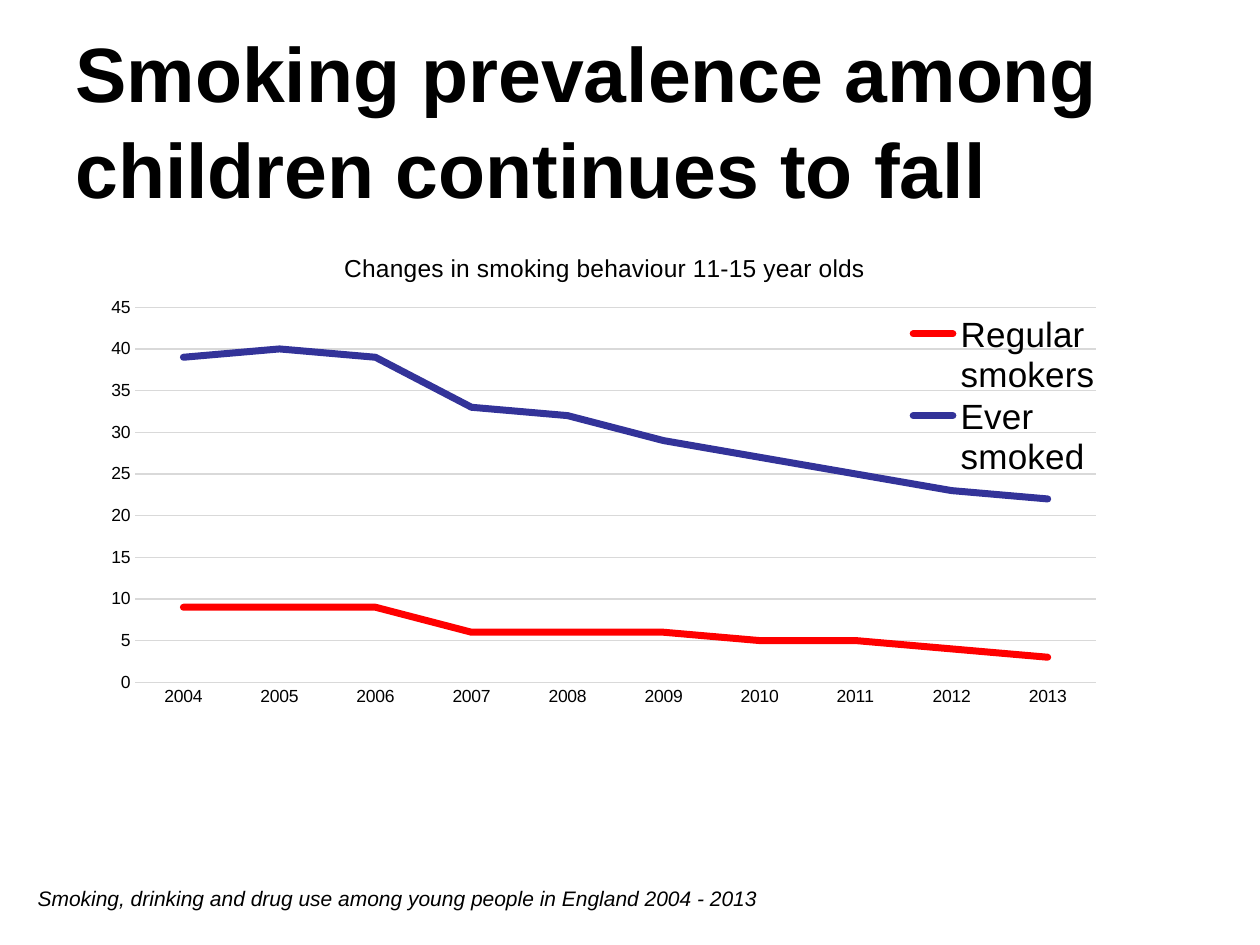
from lxml import etree
from pptx import Presentation
from pptx.chart.data import CategoryChartData
from pptx.dml.color import RGBColor
from pptx.enum.chart import XL_CHART_TYPE, XL_LEGEND_POSITION, XL_TICK_MARK
from pptx.enum.text import MSO_ANCHOR
from pptx.oxml.ns import qn
from pptx.util import Inches, Pt

LINE = XL_CHART_TYPE.LINE
BOTTOM = XL_LEGEND_POSITION.BOTTOM
NO_TICK = XL_TICK_MARK.NONE
MIDDLE = MSO_ANCHOR.MIDDLE
TOP = MSO_ANCHOR.TOP
WIDE, HIGH = Inches(10), Inches(7.5)
BLACK, GREY = "000000", "D9D9D9"
YEARS = [str(year) for year in range(2004, 2014)]
SERIES = [
    ("Regular smokers", [9, 9, 9, 6, 6, 6, 5, 5, 4, 3], "FF0000"),
    ("Ever smoked", [39, 40, 39, 33, 32, 29, 27, 25, 23, 22], "333399"),
]


def color(value):
    return RGBColor.from_string(value)


def share(left, top, width, height):
    return (round(WIDE * left), round(HIGH * top),
            round(WIDE * width), round(HIGH * height))


def style(font, size, bold=False, italic=False):
    font.name = "Arial"
    font.size = Pt(size)
    font.bold = bold
    font.italic = italic
    font.color.rgb = color(BLACK)


def stroke(line, value, width):
    line.color.rgb = color(value)
    line.width = Pt(width)


def add_text(slide, box, text, size, anchor=TOP, gap=1.0, **look):
    frame = slide.shapes.add_textbox(*box).text_frame
    frame.word_wrap = True
    frame.vertical_anchor = anchor
    frame.text = text
    line = frame.paragraphs[0]
    line.line_spacing = gap
    style(line.runs[0].font, size, **look)


def place(part, inner=False, **spots):
    layout = part.find(qn("c:layout"))
    if layout is None:
        layout = etree.Element(qn("c:layout"))
        before = part.find(qn("c:tx"))
        if before is None:
            before = part.find(qn("c:legendPos"))
        if before is None:
            part.insert(0, layout)
        else:
            before.addnext(layout)
    for child in list(layout):
        layout.remove(child)
    manual = etree.SubElement(layout, qn("c:manualLayout"))
    rules = {"layoutTarget": "inner"} if inner else {}
    rules.update(xMode="edge", yMode="edge", **spots)
    for name, value in rules.items():
        etree.SubElement(manual, qn("c:" + name)).set("val", str(value))


def set_title(chart, text):
    chart.has_title = True
    title = chart.chart_title
    title.include_in_layout = False
    title.text_frame.text = text
    style(title.text_frame.paragraphs[0].runs[0].font, 14)
    place(title._element, x=0.24, y=0.04)


def set_axes(chart):
    years, rates = chart.category_axis, chart.value_axis
    for axis in (years, rates):
        axis.major_tick_mark = axis.minor_tick_mark = NO_TICK
        style(axis.tick_labels.font, 10)
    stroke(years.format.line, GREY, 0.75)
    rates.format.line.fill.background()
    rates.has_major_gridlines = True
    stroke(rates.major_gridlines.format.line, GREY, 0.75)
    rates.minimum_scale, rates.maximum_scale, rates.major_unit = 0, 45, 5


def set_legend(chart):
    chart.has_legend = True
    legend = chart.legend
    legend.position = BOTTOM
    legend.include_in_layout = False
    style(legend.font, 20)
    place(legend._element, x=0.79, y=0.15, w=0.2, h=0.28)


def add_trend(slide, box):
    data = CategoryChartData()
    data.categories = YEARS
    for name, rates, _ in SERIES:
        data.add_series(name, rates)
    chart = slide.shapes.add_chart(LINE, *box, data).chart
    style(chart.font, 10)
    set_title(chart, "Changes in smoking behaviour 11-15 year olds")
    set_axes(chart)
    set_legend(chart)
    plot = chart.plots[0]
    plot.vary_by_categories = False
    for line, (_, _, value) in zip(plot.series, SERIES):
        line.smooth = False
        stroke(line.format.line, value, 4)
        line.format.line._get_or_add_ln().set("cap", "rnd")
        line.marker.style = None
        line.marker.format.fill.background()
        mark = line._element.find(qn("c:marker"))
        for child in list(mark):
            mark.remove(child)
        etree.SubElement(mark, qn("c:symbol")).set("val", "none")
    area = chart._chartSpace.chart.plotArea
    place(area, inner=True, x=0.04, y=0.14, w=0.94, h=0.63)


def main():
    deck = Presentation()
    deck.slide_width, deck.slide_height = WIDE, HIGH
    slide = deck.slides.add_slide(deck.slide_layouts[6])
    add_text(slide, share(0.05, 0.04, 0.9, 0.17),
             "Smoking prevalence among children continues to fall",
             44, MIDDLE, 1.04, bold=True)
    add_text(slide, share(0.02, 0.93, 0.65, 0.04),
             "Smoking, drinking and drug use among young people in England 2004 - 2013",
             12, italic=True)
    add_trend(slide, share(0.075, 0.237, 0.811, 0.63))
    deck.save("out.pptx")


if __name__ == "__main__":
    main()
